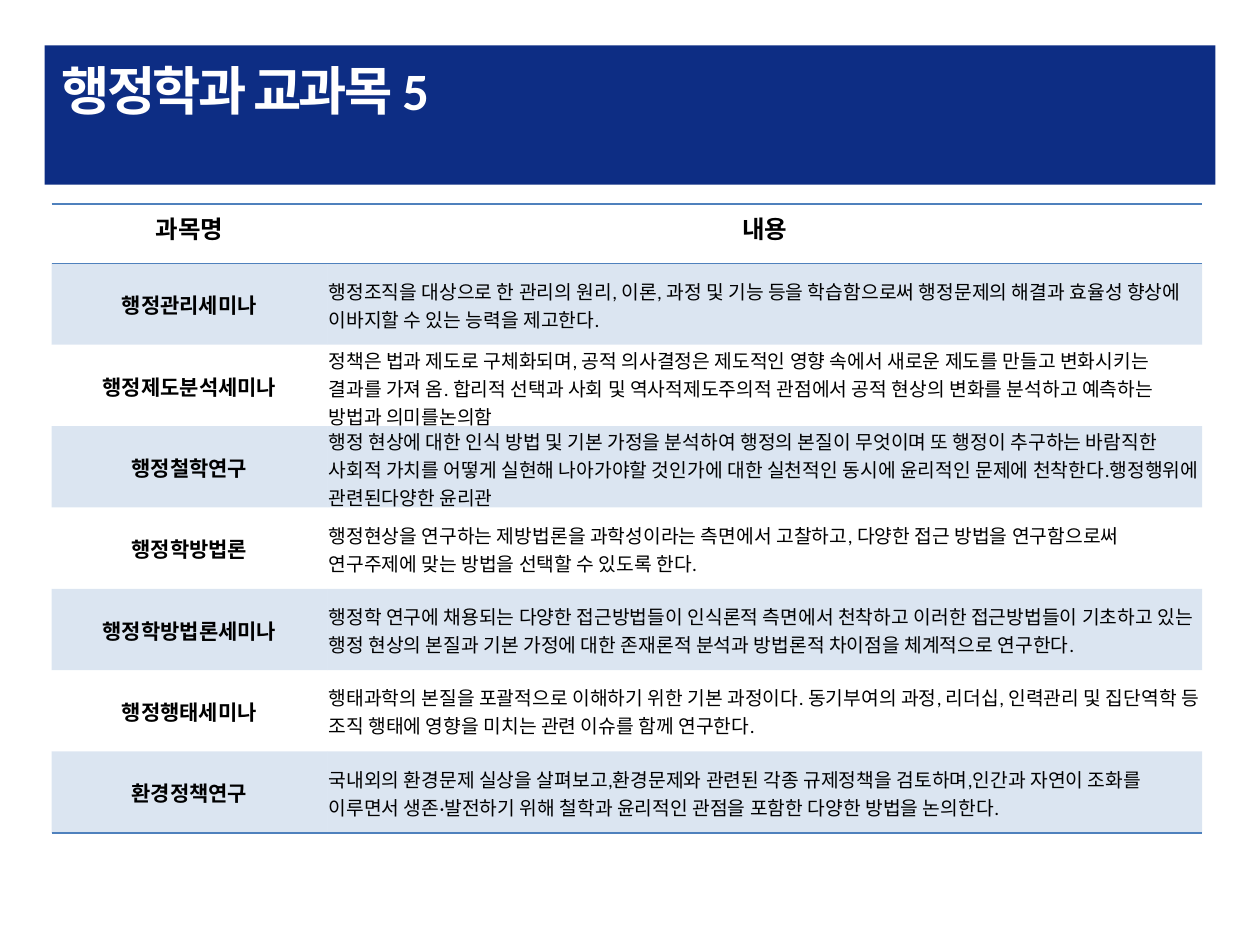
from lxml import etree
from pptx import Presentation
from pptx import util as u
from pptx.dml.color import RGBColor
from pptx.enum import shapes, text
from pptx.oxml import ns

TITLE = "행정학과 교과목 5"
HEADINGS = ("과목명", "내용")
COURSES = [
    ("행정관리세미나", "행정조직을 대상으로 한 관리의 원리, 이론, 과정 및 기능 등을 학습함으로써 행정문제의 해결과 효율성 향상에 이바지할 수 있는 능력을 제고한다."),
    ("행정제도분석세미나", "정책은 법과 제도로 구체화되며, 공적 의사결정은 제도적인 영향 속에서 새로운 제도를 만들고 변화시키는 결과를 가져 옴. 합리적 선택과 사회 및 역사적제도주의적 관점에서 공적 현상의 변화를 분석하고 예측하는 방법과 의미를논의함"),
    ("행정철학연구", "행정 현상에 대한 인식 방법 및 기본 가정을 분석하여 행정의 본질이 무엇이며 또 행정이 추구하는 바람직한 사회적 가치를 어떻게 실현해 나아가야할 것인가에 대한 실천적인 동시에 윤리적인 문제에 천착한다.행정행위에 관련된다양한 윤리관"),
    ("행정학방법론", "행정현상을 연구하는 제방법론을 과학성이라는 측면에서 고찰하고, 다양한 접근 방법을 연구함으로써 연구주제에 맞는 방법을 선택할 수 있도록 한다."),
    ("행정학방법론세미나", "행정학 연구에 채용되는 다양한 접근방법들이 인식론적 측면에서 천착하고 이러한 접근방법들이 기초하고 있는 행정 현상의 본질과 기본 가정에 대한 존재론적 분석과 방법론적 차이점을 체계적으로 연구한다."),
    ("행정행태세미나", "행태과학의 본질을 포괄적으로 이해하기 위한 기본 과정이다. 동기부여의 과정, 리더십, 인력관리 및 집단역학 등 조직 행태에 영향을 미치는 관련 이슈를 함께 연구한다."),
    ("환경정책연구", "국내외의 환경문제 실상을 살펴보고,환경문제와 관련된 각종 규제정책을 검토하며,인간과 자연이 조화를 이루면서 생존·발전하기 위해 철학과 윤리적인 관점을 포함한 다양한 방법을 논의한다."),
]

NAVY = RGBColor(0x0D, 0x2D, 0x84)
BLUE = RGBColor(0x4F, 0x81, 0xBD)
BLACK = RGBColor(0, 0, 0)
WHITE = RGBColor(255, 255, 255)
PLAIN_TABLE = "{2D5ABB26-0587-4C30-8999-92F81FD0307C}"

COLUMN_WIDTHS = (157.5, 500)
HEADING_HEIGHT, COURSE_HEIGHT = 34, 46.5
CENTER, LEFT = text.PP_ALIGN.CENTER, text.PP_ALIGN.LEFT
TITLE_FONT = {"name": "Calibri", "size": u.Pt(30), "bold": True}
HEADING_FONT = {"name": "Calibri", "size": u.Pt(14), "bold": True}
NAME_FONT = {"name": "Calibri", "size": u.Pt(12), "bold": True}
DETAIL_FONT = {"name": "Calibri", "size": u.Pt(11), "bold": False}
COURSE_CELL = {
    "vertical_anchor": text.MSO_ANCHOR.MIDDLE,
    "margin_left": u.Pt(0.75), "margin_right": u.Pt(0.75),
    "margin_top": u.Pt(0.75), "margin_bottom": 0,
}


def apply(target, values):
    for key, value in values.items():
        setattr(target, key, value)


def write(frame, words, font, color, align):
    paragraph = frame.paragraphs[0]
    paragraph.alignment = align
    run = paragraph.add_run()
    run.text = words
    apply(run.font, font)
    run.font.color.rgb = color
    return run


def tint(cell):
    cell.fill.solid()
    cell.fill.fore_color.rgb = BLUE
    color = cell._tc.tcPr.find(".//" + ns.qn("a:srgbClr"))
    etree.SubElement(color, ns.qn("a:alpha"), val="20000")


def rule(cell, sides):
    properties = cell._tc.get_or_add_tcPr()
    for position, side in enumerate(sides):
        line = etree.Element(ns.qn("a:" + side), w=str(u.Pt(1)))
        fill = etree.SubElement(line, ns.qn("a:solidFill"))
        etree.SubElement(fill, ns.qn("a:srgbClr"), val=str(BLUE))
        properties.insert(position, line)


deck = Presentation()
deck.slide_width, deck.slide_height = u.Pt(720), u.Pt(540)
slide = deck.slides.add_slide(deck.slide_layouts[6])

banner = slide.shapes.add_shape(
    shapes.MSO_SHAPE.RECTANGLE, u.Pt(25.5), u.Pt(26), u.Pt(669), u.Pt(79.5))
banner.shadow.inherit = False
banner.fill.solid()
banner.fill.fore_color.rgb = NAVY
banner.line.fill.background()

heading = slide.shapes.add_textbox(u.Pt(28), u.Pt(29.5), u.Pt(661), u.Pt(76)).text_frame
heading.word_wrap = True
title_run = write(heading, TITLE, TITLE_FONT, WHITE, LEFT)
title_run.font._element.set("spc", "-150")

rows = [HEADINGS] + COURSES
heights = [HEADING_HEIGHT] + [COURSE_HEIGHT] * len(COURSES)
courses = slide.shapes.add_table(
    len(rows), len(HEADINGS), u.Pt(29.5), u.Pt(116.5),
    u.Pt(sum(COLUMN_WIDTHS)), u.Pt(sum(heights))).table
courses.first_row = courses.horz_banding = False
courses._tbl.tblPr.find(ns.qn("a:tableStyleId")).text = PLAIN_TABLE

for column, width in zip(courses.columns, COLUMN_WIDTHS):
    column.width = u.Pt(width)

for r, (row, height) in enumerate(zip(rows, heights)):
    courses.rows[r].height = u.Pt(height)
    for c, words in enumerate(row):
        cell = courses.cell(r, c)
        font = HEADING_FONT if r == 0 else (NAME_FONT, DETAIL_FONT)[c]
        align = CENTER if r == 0 or c == 0 else LEFT
        write(cell.text_frame, words, font, BLACK, align)
        if r > 0:
            apply(cell, COURSE_CELL)
        if r % 2:
            tint(cell)
        else:
            cell.fill.background()
        if r == 0:
            rule(cell, ("lnT", "lnB"))
        elif r == len(COURSES):
            rule(cell, ("lnB",))

deck.save("out.pptx")
